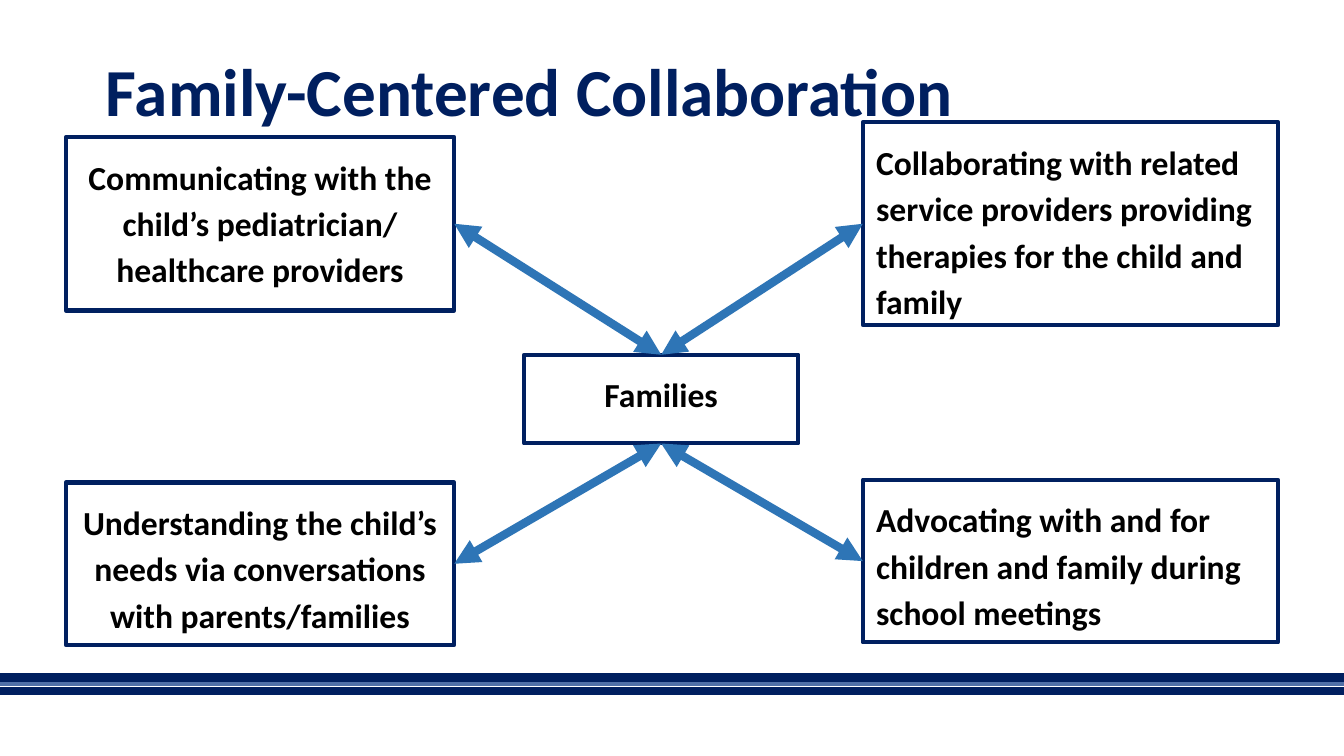
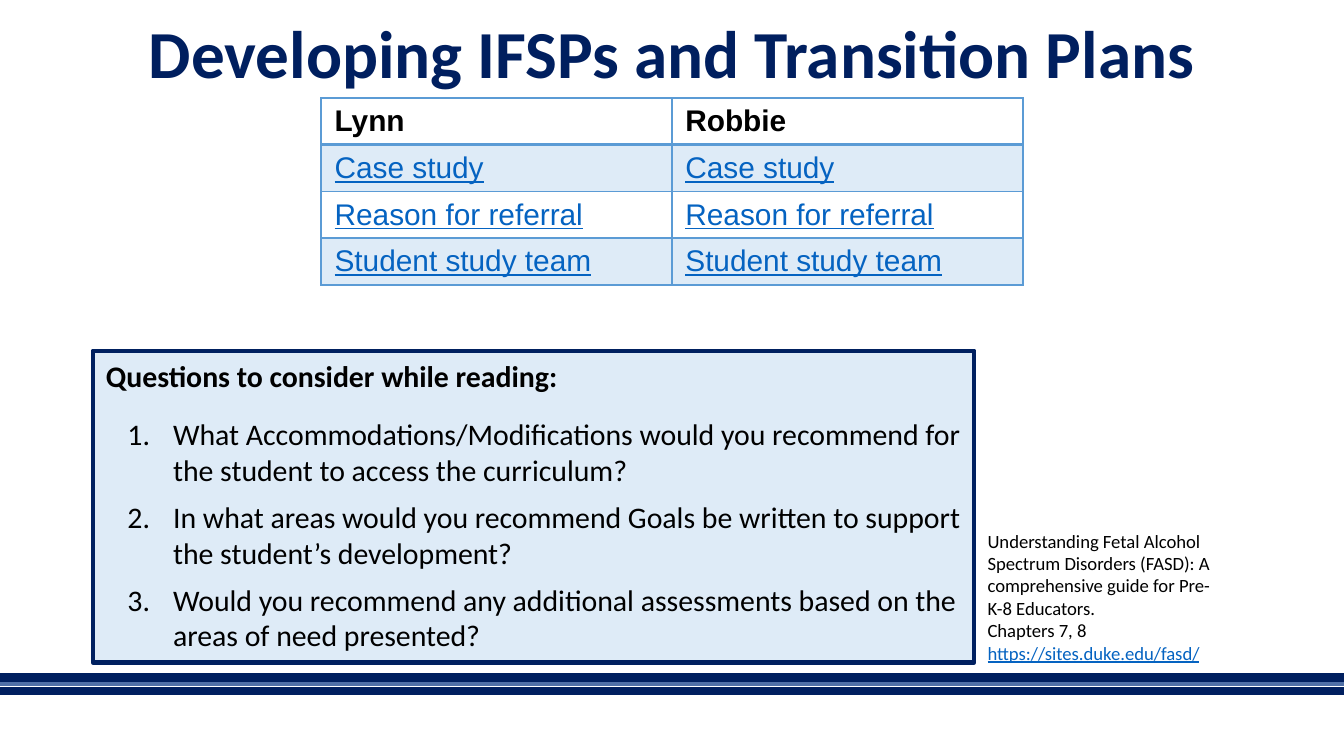
from dataclasses import dataclass

from lxml.etree import SubElement
from pptx import Presentation
from pptx.dml.color import RGBColor
from pptx.enum.shapes import MSO_CONNECTOR, MSO_SHAPE
from pptx.enum.text import MSO_ANCHOR, MSO_AUTO_SIZE, PP_ALIGN
from pptx.oxml.ns import qn
from pptx.util import Inches, Pt


@dataclass(frozen=True)
class Theme:
    navy: str = "001F5F"
    edge: str = "002060"
    steel: str = "5070A7"
    arrow: str = "2E75B6"
    grid: str = "5B9BD5"
    pale: str = "DEEBF7"
    link: str = "0563C1"
    ink: str = "000000"
    face: str = "Calibri"
    cell_face: str = "Arial"
    head: int = 36
    box: int = 18
    body: int = 16
    note: int = 10


T = Theme()
WIDTH = 10
HEIGHT = WIDTH * 9 / 16
COLS = 100  # square grid cells across the slide
TOP, LEFT, BOTTOM, RIGHT = range(4)  # connection sites of a rectangle


def rgb(code):
    return RGBColor.from_string(code)


def cells(*counts):
    """Turn counts of grid cells into lengths."""
    return [Inches(n * WIDTH / COLS) for n in counts]


def apply(target, values):
    for name, value in values.items():
        setattr(target, name, value)


def font(size, color=T.ink, bold=False, face=T.face, underline=False):
    return {"size": Pt(size), "name": face, "bold": bold,
            "underline": underline, "color": color}


LINK = {"color": T.link, "underline": True}


# Text
def write(par, text, look, **form):
    par.text = text
    apply(par, form)
    rest = {k: v for k, v in look.items() if k != "color"}
    for run in par.runs:
        apply(run.font, rest)
        run.font.color.rgb = rgb(look["color"])


def frame(shape, pad=0.1, fit=MSO_AUTO_SIZE.NONE):
    text = shape.text_frame
    apply(text, {"word_wrap": True, "auto_size": fit,
                 "vertical_anchor": MSO_ANCHOR.TOP,
                 "margin_left": Inches(0.1), "margin_right": Inches(0.1),
                 "margin_top": Inches(pad), "margin_bottom": Inches(pad)})
    return text


def number(par):
    props = par._p.get_or_add_pPr()
    props.set("marL", str(Inches(0.5)))
    props.set("indent", str(Inches(-0.34)))
    tint = SubElement(props, qn("a:buClr"))
    SubElement(tint, qn("a:srgbClr"), val=T.ink)
    SubElement(props, qn("a:buFont"), typeface="+mj-lt")
    SubElement(props, qn("a:buAutoNum"), type="arabicPeriod")


def title(slide, text, row, **form):
    shape = slide.shapes.add_textbox(*cells(6.9, row, 86.2, 10.9))
    write(frame(shape).paragraphs[0], text, font(T.head, T.navy, True), **form)


# Lines and boxes
def line(slide, color, weight, ends=(0, 0, 0, 0)):
    stroke = slide.shapes.add_connector(MSO_CONNECTOR.STRAIGHT, *cells(*ends))
    stroke.line.color.rgb = rgb(color)
    stroke.line.width = Pt(weight)
    SubElement(stroke._element.spPr, qn("a:effectLst"))
    return stroke


def arrow(slide, start, site, end, stop):
    stroke = line(slide, T.arrow, 4.5)
    stroke.begin_connect(start, site)
    stroke.end_connect(end, stop)
    for tip in ("a:headEnd", "a:tailEnd"):
        SubElement(stroke.line._get_or_add_ln(), qn(tip), type="triangle")


def box(slide, place, fill=None):
    shape = slide.shapes.add_shape(MSO_SHAPE.RECTANGLE, *cells(*place))
    shape.shadow.inherit = False
    if fill:
        shape.fill.solid()
        shape.fill.fore_color.rgb = rgb(fill)
    else:
        shape.fill.background()
    shape.line.color.rgb = rgb(T.edge)
    shape.line.width = Pt(2.25)
    return shape


def label(slide, place, text, align):
    shape = box(slide, place)
    write(frame(shape).paragraphs[0], text, font(T.box, bold=True),
          alignment=align, line_spacing=1.15)
    return shape


# Table
def border(cell, row):
    props = cell._tc.get_or_add_tcPr()
    thick = {0: "B", 1: "T"}.get(row)  # heavier rule under the header
    for side in "LRTB":
        edge = SubElement(props, qn(f"a:ln{side}"),
                          w=str(Pt(2 if side == thick else 1)))
        fill = SubElement(edge, qn("a:solidFill"))
        SubElement(fill, qn("a:srgbClr"), val=T.grid)


def table(slide, place, rows):
    shape = slide.shapes.add_table(len(rows), len(rows[0]), *cells(*place))
    grid = shape.table
    apply(grid, {"first_row": False, "horz_banding": False})
    for r, words in enumerate(rows):
        grid.rows[r].height = Inches(0.32)
        look = font(T.body, face=T.cell_face, bold=r == 0)
        if r:
            look.update(LINK)
        for c, word in enumerate(words):
            cell = grid.cell(r, c)
            write(cell.text_frame.paragraphs[0], word, look)
            border(cell, r)
            if r % 2:
                cell.fill.solid()
                cell.fill.fore_color.rgb = rgb(T.pale)
            else:
                cell.fill.background()


# Slides
def start(deck):
    slide = deck.slides.add_slide(deck.slide_layouts[6])
    bands = (T.navy, 4.5), (T.steel, 2.25), (T.navy, 4.5)
    for i, (color, weight) in enumerate(bands):
        row = 50.4 + i / 2
        line(slide, color, weight, (0, row, COLS, row))
    return slide


def family(deck):
    slide = start(deck)
    title(slide, "Family-Centered Collaboration", 1.8, line_spacing=1.15)
    left, right = (4.9, 28.9), (64.2, 30.9)
    mid, near = PP_ALIGN.CENTER, PP_ALIGN.LEFT
    spokes = [
        (left, 10.2, 12.9, mid, TOP, RIGHT,
         "Communicating with the child’s pediatrician/\vhealthcare providers"),
        (right, 9.1, 15.1, near, TOP, LEFT,
         "Collaborating with related service providers providing "
         "therapies for the child and family"),
        (left, 35.9, 12.1, mid, BOTTOM, RIGHT,
         "Understanding the child’s needs via conversations "
         "with parents/families"),
        (right, 35.7, 12.1, near, BOTTOM, LEFT,
         "Advocating with and for children and family during "
         "school meetings"),
    ]
    hub = label(slide, (39, 26.4, 20.4, 6.6), "Families", mid)
    joins = []
    for (x, wide), y, high, align, site, stop, text in spokes:
        shape = label(slide, (x, y, wide, high), text, align)
        joins.append((site, shape, stop))
    for join in joins:
        arrow(slide, hub, *join)


def plans(deck):
    slide = start(deck)
    title(slide, "Developing IFSPs and Transition Plans", 0.5,
          line_spacing=0.9, alignment=PP_ALIGN.CENTER)
    heads = ["Lynn", "Robbie"]
    links = ["Case study", "Reason for referral", "Student study team"]
    table(slide, (23.9, 7.3, 52.2, 12.8),
          [heads] + [[name] * len(heads) for name in links])

    # Questions
    panel = box(slide, (6.9, 26.1, 65.6, 23.2), T.pale)
    text = frame(panel, 0.05, MSO_AUTO_SIZE.SHAPE_TO_FIT_TEXT)
    write(text.paragraphs[0], "Questions to consider while reading:",
          font(T.body, bold=True), alignment=PP_ALIGN.LEFT)
    asks = [
        "What Accommodations/Modifications would you recommend for "
        "the student to access the curriculum?",
        "In what areas would you recommend Goals be written to support "
        "the student’s development?",
        "Would you recommend any additional assessments based on the "
        "areas of need presented?",
    ]
    for i, ask in enumerate(asks):
        par = text.add_paragraph()
        number(par)
        write(par, ask, font(T.body), alignment=PP_ALIGN.LEFT,
              space_before=Pt(0 if i else 12), space_after=Pt(6))

    # Source note
    note = slide.shapes.add_textbox(*cells(72.5, 38.9, 19.4, 11.1))
    text = frame(note, 0.05, MSO_AUTO_SIZE.SHAPE_TO_FIT_TEXT)
    small = font(T.note)
    write(text.paragraphs[0], "Understanding Fetal Alcohol Spectrum Disorders "
          "(FASD): A comprehensive guide for Pre-K-8 Educators.", small)
    write(text.add_paragraph(), "Chapters 7, 8", small)
    write(text.add_paragraph(), "https://sites.duke.edu/fasd/", small | LINK)


def main():
    deck = Presentation()
    apply(deck, {"slide_width": Inches(WIDTH), "slide_height": Inches(HEIGHT)})
    family(deck)
    plans(deck)
    deck.save("out.pptx")


if __name__ == "__main__":
    main()
